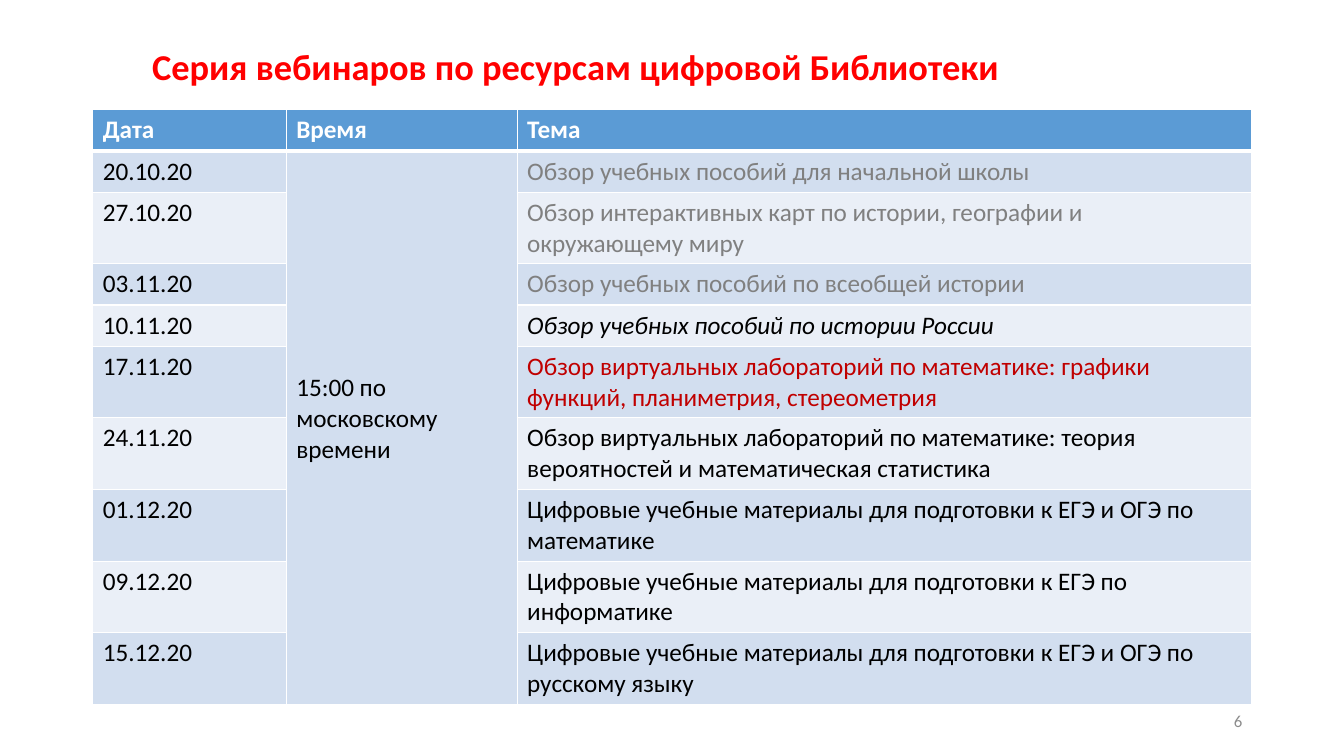
from lxml.etree import SubElement
from pptx import Presentation
from pptx.dml.color import RGBColor
from pptx.enum.text import MSO_ANCHOR, PP_ALIGN
from pptx.oxml import parse_xml
from pptx.oxml.ns import nsdecls, qn
from pptx.util import Inches, Pt

WIDTH, HEIGHT = Inches(13.33), Inches(7.5)
COLORS = {
    "title": "FF0000", "header": "5B9BD5", "odd": "D2DEEF", "even": "EAEFF7",
    "white": "FFFFFF", "text": "000000", "past": "808080", "accent": "C00000",
    "number": "8C8C8C",
}
COLUMNS = (14.4, 17.18, 54.68)
ONE_LINE, TWO_LINES = 5.45, 9.48
HEADERS = ("Дата", "Время", "Тема")
TIME = "15:00 по московскому времени"
WEBINARS = [
    ("20.10.20", "Обзор учебных пособий для начальной школы", "past"),
    ("27.10.20", "Обзор интерактивных карт по истории, географии и окружающему миру", "past"),
    ("03.11.20", "Обзор учебных пособий по всеобщей истории", "past"),
    ("10.11.20", "Обзор учебных пособий по истории России", "text"),
    ("17.11.20", "Обзор виртуальных лабораторий по математике: графики функций, "
     "планиметрия, стереометрия", "accent"),
    ("24.11.20", "Обзор виртуальных лабораторий по математике: теория вероятностей "
     "и математическая статистика", "text"),
    ("01.12.20", "Цифровые учебные материалы для подготовки к ЕГЭ и ОГЭ по математике", "text"),
    ("09.12.20", "Цифровые учебные материалы для подготовки к ЕГЭ по информатике", "text"),
    ("15.12.20", "Цифровые учебные материалы для подготовки к ЕГЭ и ОГЭ по русскому языку", "text"),
]
SHORT_ROWS = (0, 1, 3, 4)
ITALIC_ROW = 4


def across(share):
    return int(WIDTH * share / 100)


def down(share):
    return int(HEIGHT * share / 100)


def write(tf, text, size, color, bold=False, italic=False):
    tf.text = text
    p = tf.paragraphs[0]
    font = p.runs[0].font
    font.name, font.size = "Calibri", Pt(size)
    font.bold, font.italic = bold, italic
    font.color.rgb = RGBColor.from_string(COLORS[color])
    return p


def add_label(slide, box, text, size, color, bold=False, align=PP_ALIGN.LEFT):
    x, y, w, h = box
    tf = slide.shapes.add_textbox(across(x), down(y), across(w), down(h)).text_frame
    tf.word_wrap = True
    tf.vertical_anchor = MSO_ANCHOR.MIDDLE
    p = write(tf, text, size, color, bold)
    p.alignment = align
    return p


def set_borders(cell, top, bottom):
    tcPr = cell._tc.get_or_add_tcPr()
    for i, (side, width) in enumerate(zip("LRTB", (1, 1, top, bottom))):
        ln = parse_xml(f'<a:ln{side} {nsdecls("a")} w="{Pt(width)}"/>')
        fill = SubElement(ln, qn("a:solidFill"))
        SubElement(fill, qn("a:srgbClr"), val=COLORS["white"])
        tcPr.insert(i, ln)


def style_cell(cell, row):
    fill = "header" if row == 0 else "odd" if row % 2 else "even"
    cell.fill.solid()
    cell.fill.fore_color.rgb = RGBColor.from_string(COLORS[fill])
    set_borders(cell, 3 if row == 1 else 1, 3 if row == 0 else 1)


def add_schedule(slide, x, y):
    count = len(WEBINARS) + 1
    heights = [ONE_LINE if r in SHORT_ROWS else TWO_LINES for r in range(count)]
    frame = slide.shapes.add_table(count, len(COLUMNS), across(x), down(y),
                                   across(sum(COLUMNS)), down(sum(heights)))
    table = frame.table
    for column, width in zip(table.columns, COLUMNS):
        column.width = across(width)
    for r, height in enumerate(heights):
        table.rows[r].height = down(height)
        for cell in table.rows[r].cells:
            style_cell(cell, r)
    for c, header in enumerate(HEADERS):
        write(table.cell(0, c).text_frame, header, 18, "white", bold=True)
    for r, (date, topic, color) in enumerate(WEBINARS, 1):
        write(table.cell(r, 0).text_frame, date, 18, "text")
        write(table.cell(r, 2).text_frame, topic, 18, color, italic=r == ITALIC_ROW)
    time = table.cell(1, 1)
    time.merge(table.cell(count - 1, 1))
    time.vertical_anchor = MSO_ANCHOR.MIDDLE
    time.margin_bottom = down(3)
    write(time.text_frame, TIME, 18, "text")


def main():
    """Build the webinar schedule slide."""
    prs = Presentation()
    prs.slide_width, prs.slide_height = WIDTH, HEIGHT
    slide = prs.slides.add_slide(prs.slide_layouts[6])
    title = add_label(slide, (10.58, 2.27, 82.6, 13.73),
                      "Серия вебинаров по ресурсам цифровой Библиотеки", 26, "title", bold=True)
    title.line_spacing = 0.9
    add_schedule(slide, 6.9, 14.53)
    add_label(slide, (70.67, 92.67, 22.5, 5.33), "6", 12, "number", align=PP_ALIGN.RIGHT)
    prs.save("out.pptx")


if __name__ == "__main__":
    main()
